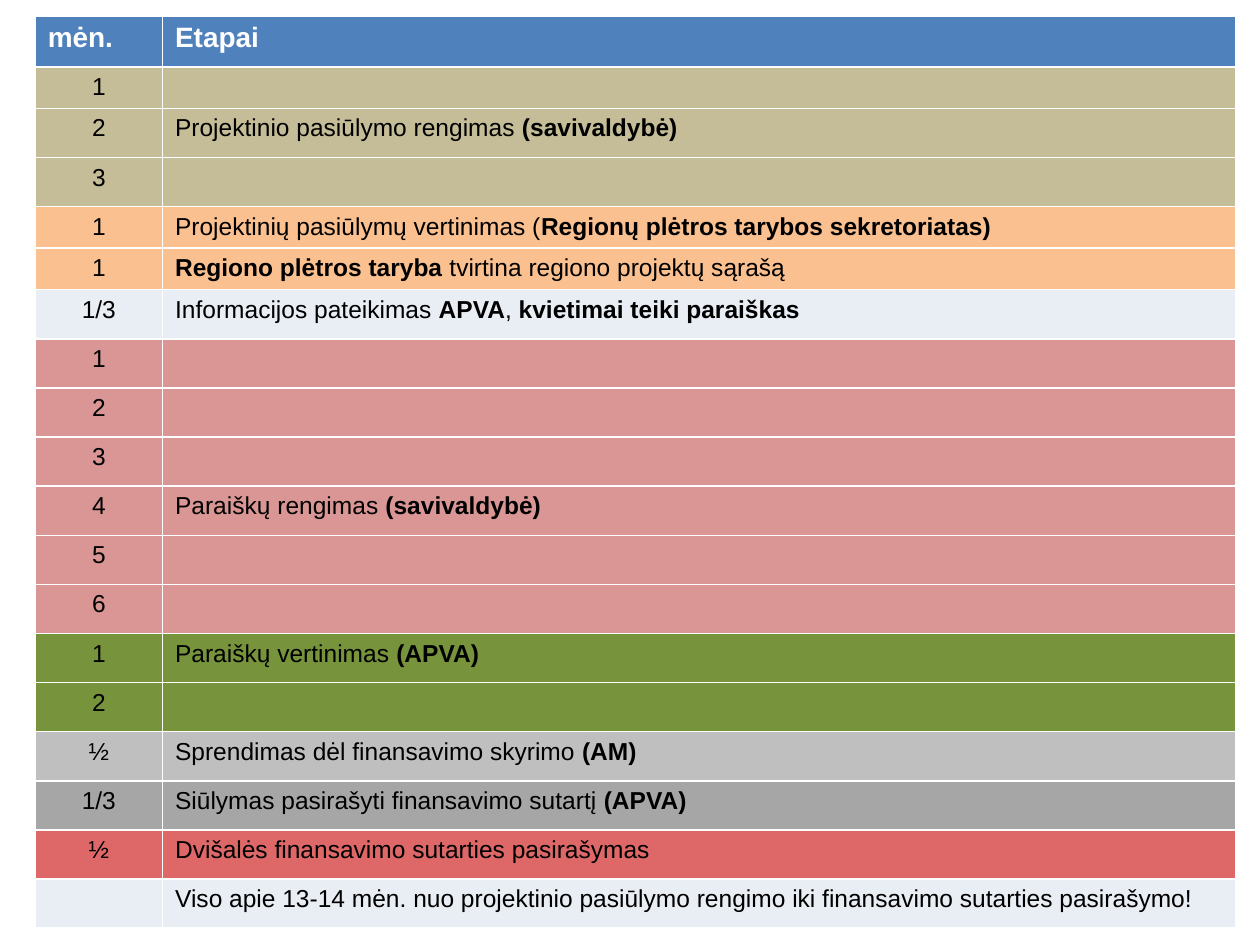
from lxml import etree
from pptx import Presentation
from pptx.dml.color import RGBColor
from pptx.enum import text
from pptx.oxml.ns import qn
from pptx.util import Inches, Pt

COLORS = {
    "header": "4F81BD", "proposal": "C4BD97", "region": "FAC090",
    "plain": "E9EDF4", "application": "D99694", "review": "77933C",
    "decision": "BFBFBF", "offer": "A6A6A6", "signing": "DE6868",
    "white": "FFFFFF", "black": "000000",
}
FONT = "Arial"
HEADER = ("mėn.", "Etapai")

# month, colour, stage text; parts between asterisks are bold
STAGES = [
    ("1", "proposal", ""),
    ("2", "proposal", "Projektinio pasiūlymo rengimas *(savivaldybė)*"),
    ("3", "proposal", ""),
    ("1", "region", "Projektinių pasiūlymų vertinimas (*Regionų plėtros tarybos sekretoriatas)*"),
    ("1", "region", "*Regiono plėtros taryba* tvirtina regiono projektų sąrašą"),
    ("1/3", "plain", "Informacijos pateikimas *APVA*, *kvietimai teiki paraiškas*"),
    ("1", "application", ""),
    ("2", "application", ""),
    ("3", "application", ""),
    ("4", "application", "Paraiškų rengimas *(savivaldybė)*"),
    ("5", "application", ""),
    ("6", "application", ""),
    ("1", "review", "Paraiškų vertinimas *(APVA)*"),
    ("2", "review", ""),
    ("½", "decision", "Sprendimas dėl finansavimo skyrimo *(AM)*"),
    ("1/3", "offer", "Siūlymas pasirašyti finansavimo sutartį *(APVA)*"),
    ("½", "signing", "Dvišalės finansavimo sutarties pasirašymas"),
    ("", "plain", "Viso apie 13-14 mėn. nuo projektinio pasiūlymo rengimo "
                  "iki finansavimo sutarties pasirašymo!"),
]
LEFT, TOP = 0.28, 0.13
COLUMNS = (1.01, 8.52)
HEADER_HEIGHT, ROW_HEIGHT, LOW_HEIGHT = 0.4, 0.39, 0.33
LOW_ROWS = {1, 4, 5}


def rgb(name):
    return RGBColor.from_string(COLORS[name])


def fill_cell(cell, content, fill, size=14, color="black", align=None):
    """Write content into the cell; text between asterisks becomes bold."""
    cell.fill.solid()
    cell.fill.fore_color.rgb = rgb(fill)
    p = cell.text_frame.paragraphs[0]
    p.alignment = align
    p.font.name, p.font.size = FONT, Pt(size)
    p.font.color.rgb = rgb(color)
    for i, part in enumerate(content.split("*")):
        if part:
            r = p.add_run()
            r.text = part
            r.font.name, r.font.size = FONT, Pt(size)
            r.font.bold = i % 2 == 1
            r.font.color.rgb = rgb(color)
    if not content:  # keeps an empty cell from growing its row
        etree.SubElement(p._p, qn("a:endParaRPr"), sz=str(size * 100))


def main():
    prs = Presentation()
    prs.slide_width, prs.slide_height = Inches(10), Inches(7.5)
    s = prs.slides.add_slide(prs.slide_layouts[6])

    heights = [HEADER_HEIGHT] + [
        LOW_HEIGHT if i in LOW_ROWS else ROW_HEIGHT
        for i in range(1, len(STAGES) + 1)]
    table = s.shapes.add_table(
        len(heights), len(COLUMNS), Inches(LEFT), Inches(TOP),
        Inches(sum(COLUMNS)), Inches(sum(heights))).table
    table.horz_banding = False
    for column, width in zip(table.columns, COLUMNS):
        column.width = Inches(width)
    for row, height in zip(table.rows, heights):
        row.height = Inches(height)

    for col, label in enumerate(HEADER):
        fill_cell(table.cell(0, col), f"*{label}*", "header", 16, "white")
    for row, (month, fill, stage) in enumerate(STAGES, 1):
        fill_cell(table.cell(row, 0), month, fill, align=text.PP_ALIGN.CENTER)
        fill_cell(table.cell(row, 1), stage, fill)

    prs.save("out.pptx")


if __name__ == "__main__":
    main()
